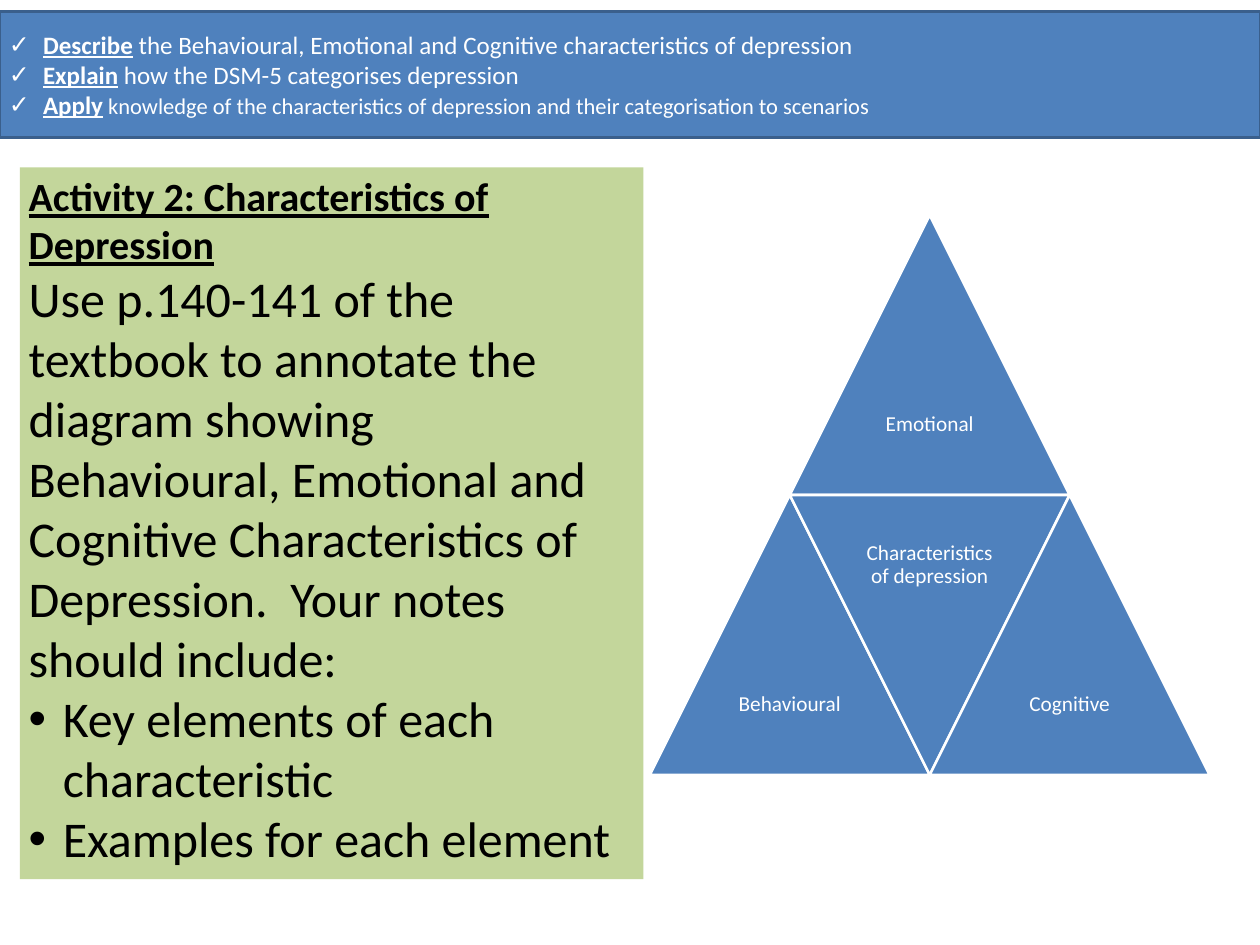
from lxml.etree import SubElement
from pptx import Presentation
from pptx.dml.color import RGBColor
from pptx.enum.shapes import MSO_SHAPE as Preset
from pptx.enum.text import MSO_ANCHOR as Anchor, PP_ALIGN as Align
from pptx.oxml.ns import qn
from pptx.util import Inches, Pt

OBJECTIVES = [
    ("Describe", " the Behavioural, Emotional and Cognitive characteristics of depression", "objective"),
    ("Explain", " how the DSM-5 categorises depression", "objective"),
    ("Apply", " knowledge of the characteristics of depression and their categorisation to scenarios", "detail"),
]
ACTIVITY_TITLE = "Activity 2: Characteristics of Depression"
ACTIVITY_TASK = ("Use p.140-141 of the textbook to annotate the diagram showing Behavioural, "
                 "Emotional and Cognitive Characteristics of Depression.  Your notes should include:")
NOTES = ["Key elements of each characteristic", "Examples for each element"]
# label, column and row in half-side steps, points down
PYRAMID = [
    ("Emotional", 1, 0, False),
    ("Behavioural", 0, 2, False),
    ("Characteristics of depression", 1, 2, True),
    ("Cognitive", 2, 2, False),
]

THEME = {
    "font": "Calibri",
    "blue": "4F81BD", "edge": "3A5F8C", "green": "C3D69B", "white": "FFFFFF", "black": "000000",
    "title": 32, "body": 40, "objective": 20, "detail": 18, "label": 17,
    "line": 2,
}
SLIDE_W, SLIDE_H = 14, 10.5
BANNER = (0, 0.13, SLIDE_W, 1.4)
ACTIVITY = (0.22, 1.86, 6.93, 7.91)
PYRAMID_LEFT, PYRAMID_TOP, SIDE = 7.22, 2.39, 3.11
HALF = SIDE / 2
HANGING = 0.38


def colour(name):
    return RGBColor.from_string(THEME[name])


def add_panel(slide, preset, box, fill, line=None):
    panel = slide.shapes.add_shape(preset, *map(Inches, box))
    panel.shadow.inherit = False
    panel.fill.solid()
    panel.fill.fore_color.rgb = colour(fill)
    if line:
        panel.line.color.rgb = colour(line)
        panel.line.width = Pt(THEME["line"])
    else:
        panel.line.fill.background()
    return panel


def style(run, size, ink, strong=False):
    font = run.font
    font.name, font.size, font.color.rgb = THEME["font"], Pt(THEME[size]), colour(ink)
    font.bold = font.underline = strong


def add_bullet(paragraph, mark):
    props = paragraph._p.get_or_add_pPr()
    props.set("marL", str(Inches(HANGING)))
    props.set("indent", str(-Inches(HANGING)))
    SubElement(props, qn("a:buFont")).set("typeface", "Arial")
    SubElement(props, qn("a:buChar")).set("char", mark)


def fill_paragraphs(frame, paragraphs, ink):
    """Write (bullet, [(text, size, strong), ...]) entries, left aligned."""
    frame.word_wrap = True
    for i, (mark, pieces) in enumerate(paragraphs):
        paragraph = frame.add_paragraph() if i else frame.paragraphs[0]
        paragraph.alignment = Align.LEFT
        if mark:
            add_bullet(paragraph, mark)
        for text, size, strong in pieces:
            run = paragraph.add_run()
            run.text = text
            style(run, size, ink, strong)


def add_triangle(slide, label, column, row, inverted):
    left, top = PYRAMID_LEFT + column * HALF, PYRAMID_TOP + row * HALF
    triangle = add_panel(slide, Preset.ISOSCELES_TRIANGLE, (left, top, SIDE, SIDE), "blue", "white")
    triangle.rotation = 180 if inverted else 0

    label_top = top if inverted else top + HALF
    caption = slide.shapes.add_textbox(*map(Inches, (left + HALF / 2, label_top, HALF, HALF)))
    frame = caption.text_frame
    frame.word_wrap = True
    frame.vertical_anchor = Anchor.MIDDLE
    frame.margin_left = frame.margin_right = frame.margin_top = frame.margin_bottom = Inches(0.07)
    frame.text = label
    paragraph = frame.paragraphs[0]
    paragraph.alignment = Align.CENTER
    paragraph.line_spacing = 0.9
    style(paragraph.runs[0], "label", "white")


def main():
    deck = Presentation()
    deck.slide_width, deck.slide_height = Inches(SLIDE_W), Inches(SLIDE_H)
    slide = deck.slides.add_slide(deck.slide_layouts[6])

    activity = add_panel(slide, Preset.RECTANGLE, ACTIVITY, "green").text_frame
    activity.vertical_anchor = Anchor.TOP
    fill_paragraphs(activity, [
        (None, [(ACTIVITY_TITLE, "title", True)]),
        (None, [(ACTIVITY_TASK, "body", False)]),
        *[("•", [(note, "body", False)]) for note in NOTES],
    ], "black")

    for part in PYRAMID:
        add_triangle(slide, *part)

    banner = add_panel(slide, Preset.RECTANGLE, BANNER, "blue", "edge").text_frame
    banner.vertical_anchor = Anchor.MIDDLE
    fill_paragraphs(banner, [
        ("✓", [(verb, "objective", True), (rest, size, False)]) for verb, rest, size in OBJECTIVES
    ], "white")

    deck.save("out.pptx")


if __name__ == "__main__":
    main()
